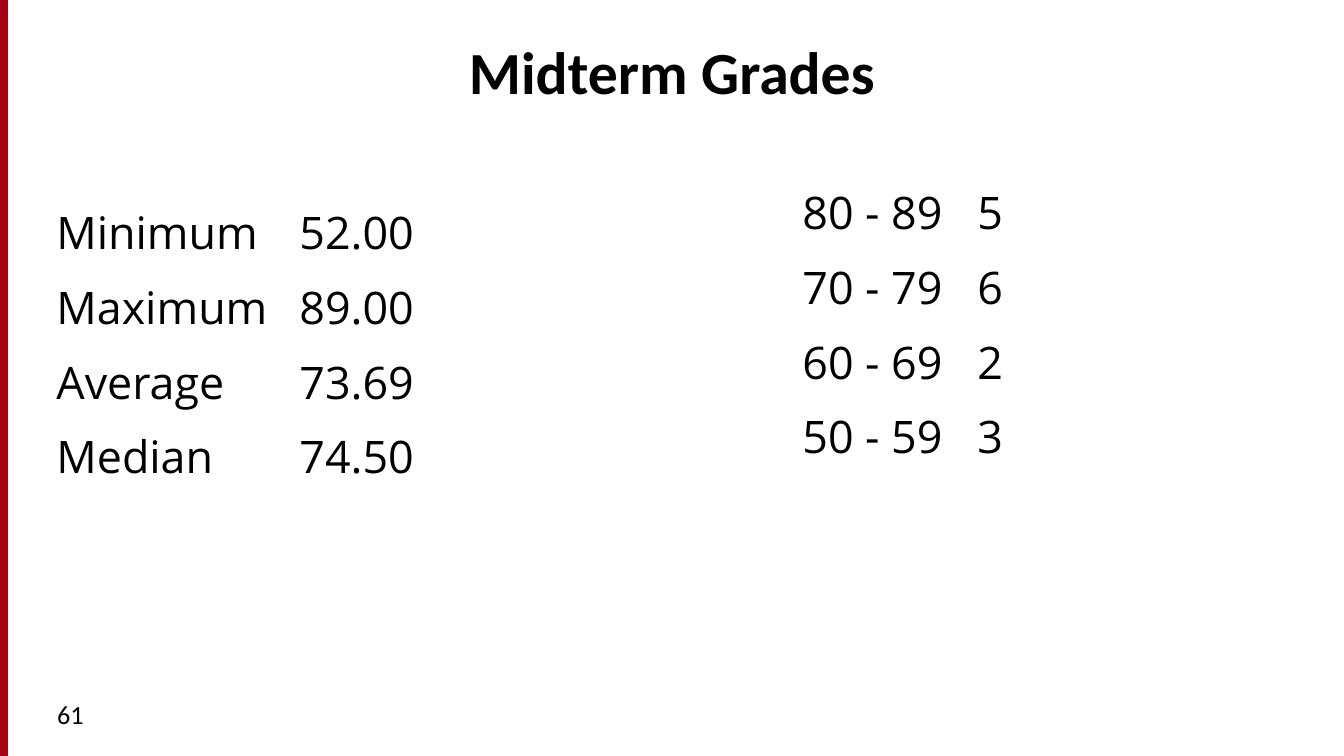
from pptx import Presentation
from pptx.dml.color import RGBColor
from pptx.enum.shapes import MSO_SHAPE
from pptx.enum.text import MSO_ANCHOR, PP_ALIGN
from pptx.util import Emu, Pt

RECT = MSO_SHAPE.RECTANGLE
MIDDLE, BOTTOM = MSO_ANCHOR.MIDDLE, MSO_ANCHOR.BOTTOM
LEFT, CENTER = PP_ALIGN.LEFT, PP_ALIGN.CENTER

SCALE = 914400 / 134.4  # EMU in one px
WIDE, HIGH = 1344, 756
COLORS = {"ink": "000000", "bar": "A40508", "edge": "A4001D"}
FONTS = {
    "title": {"name": "Calibri", "size": Pt(32), "bold": True},
    "cell": {"name": "Open Sans", "size": Pt(24), "bold": False},
    "number": {"name": "Calibri", "size": Pt(14), "bold": False},
}
STATS = [("Minimum", "52.00"), ("Maximum", "89.00"),
         ("Average", "73.69"), ("Median", "74.50")]
COUNTS = [("80 - 89", "5"), ("70 - 79", "6"),
          ("60 - 69", "2"), ("50 - 59", "3")]


def px(n):
    return Emu(round(n * SCALE))


def color(key):
    return RGBColor.from_string(COLORS[key])


def write(frame, text, kind, align=LEFT):
    para = frame.paragraphs[0]
    para.alignment = align
    run = para.add_run()
    run.text = text
    for key, value in FONTS[kind].items():
        setattr(run.font, key, value)
    run.font.color.rgb = color("ink")


def add_bar(slide, box):
    bar = slide.shapes.add_shape(RECT, *map(px, box))
    bar.shadow.inherit = False
    bar.fill.solid()
    bar.fill.fore_color.rgb = color("bar")
    bar.line.color.rgb = color("edge")
    bar.line.width = Pt(0.75)


def set_title(slide, box, text):
    title = slide.shapes.title
    for key, value in zip(("left", "top", "width", "height"), box):
        setattr(title, key, px(value))
    title.text_frame.vertical_anchor = BOTTOM
    write(title.text_frame, text, "title", CENTER)


def add_grid(slide, box, rows):
    count = len(rows[0])
    grid = slide.shapes.add_table(len(rows), count, *map(px, box)).table
    grid.first_row = grid.horz_banding = False
    for col in grid.columns:
        col.width = px(box[2] / count)
    for r, row in enumerate(rows):
        for c, text in enumerate(row):
            cell = grid.cell(r, c)
            cell.fill.background()
            cell.vertical_anchor = MIDDLE
            write(cell.text_frame, text, "cell")


def add_number(slide, box, text):
    frame = slide.shapes.add_textbox(*map(px, box)).text_frame
    frame.word_wrap = True
    write(frame, text, "number")


def main():
    deck = Presentation()
    deck.slide_width, deck.slide_height = px(WIDE), px(HIGH)
    slide = deck.slides.add_slide(deck.slide_layouts[5])

    # Left edge and heading
    add_bar(slide, (0, 0, 7, HIGH))
    set_title(slide, (0, 1, WIDE, 112), "Midterm Grades")

    # Summary statistics and grade counts
    add_grid(slide, (43, 195, 486, 298), STATS)
    add_grid(slide, (789, 175, 350, 298), COUNTS)

    # Page number
    add_number(slide, (44, 692, 292, 51), "61")
    deck.save("out.pptx")


if __name__ == "__main__":
    main()
